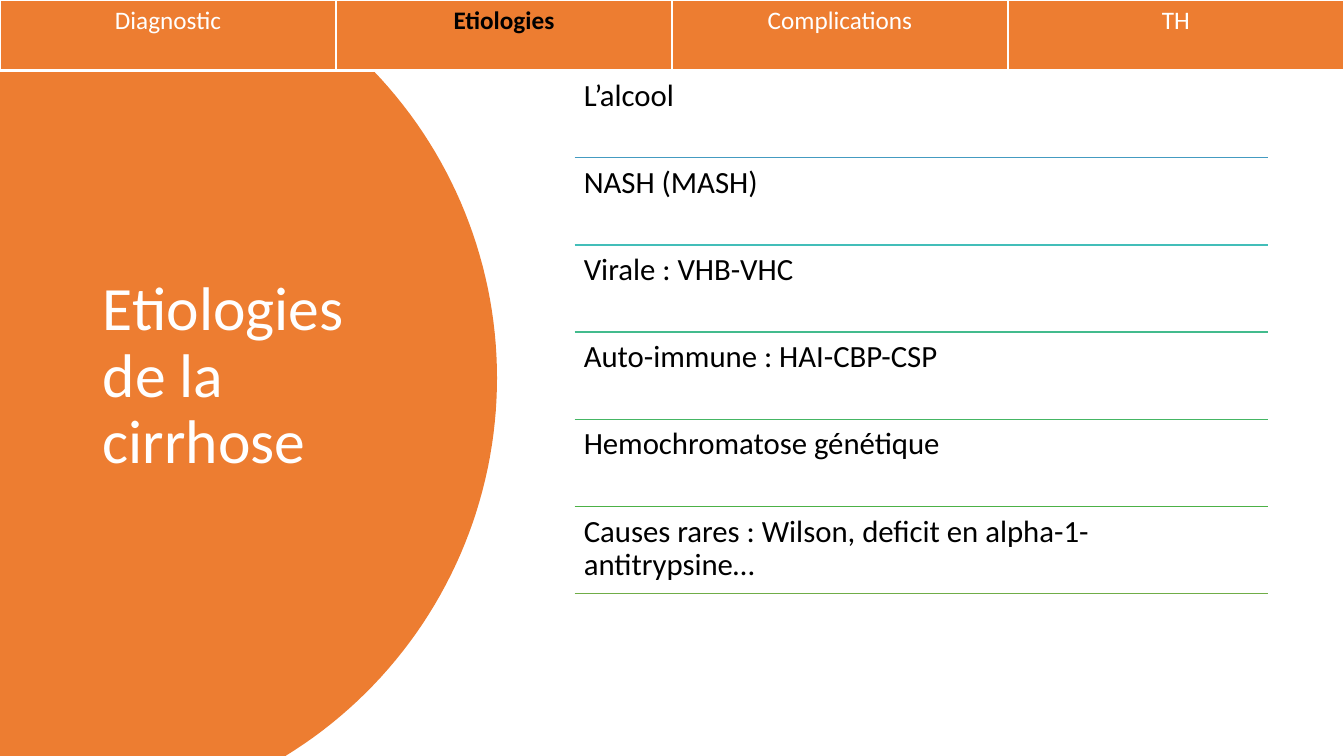
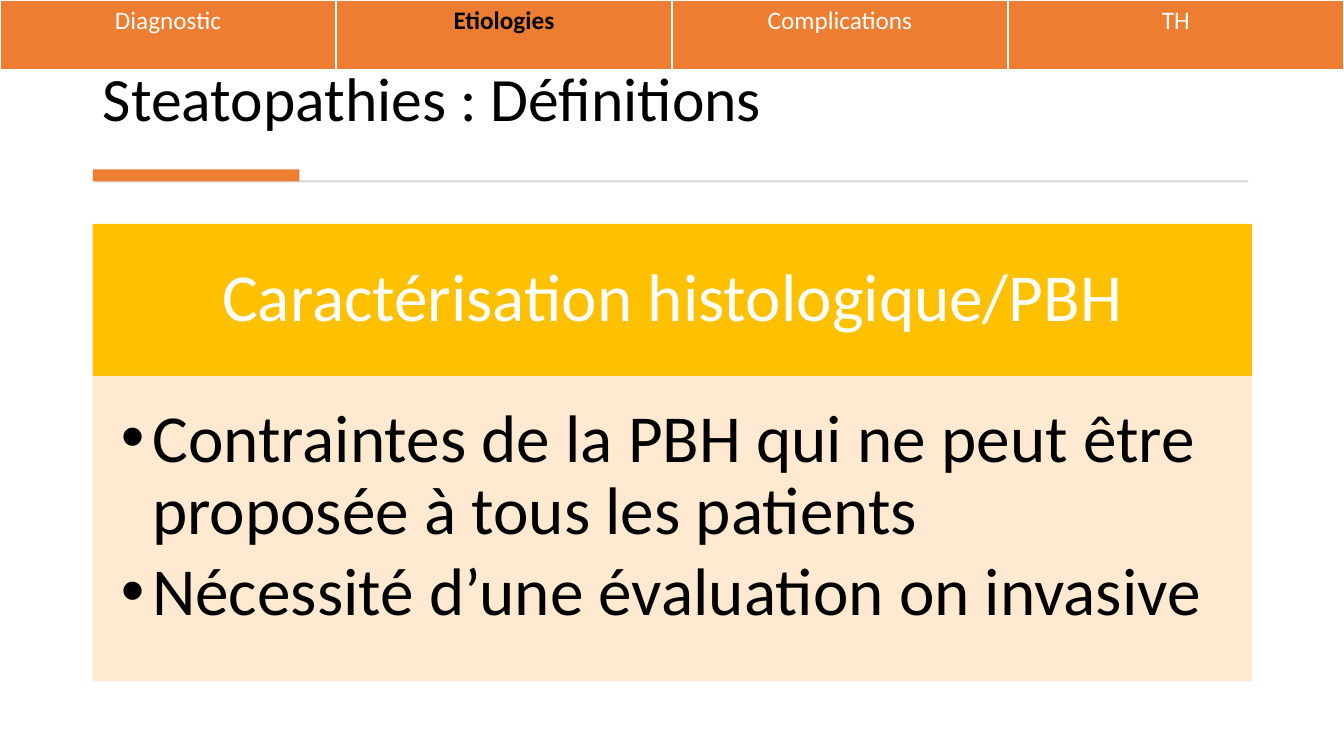
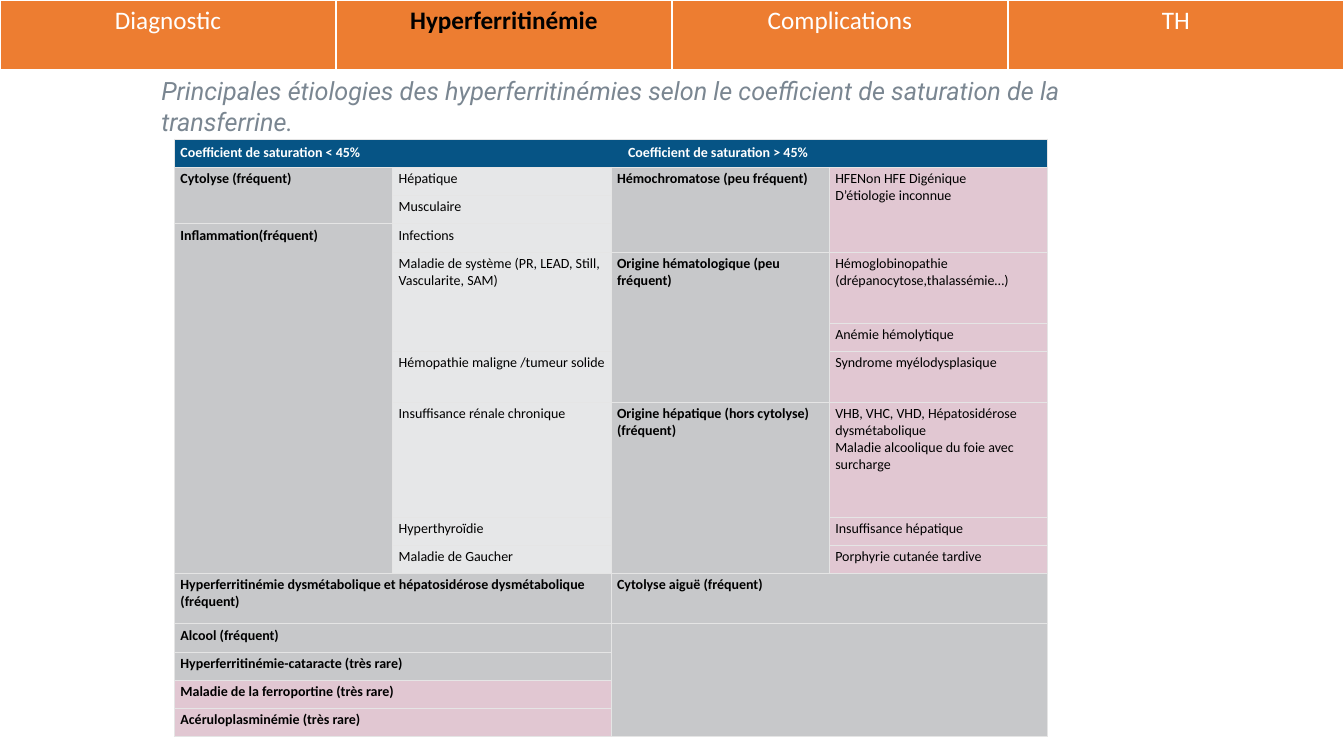
import math

import lxml.etree
import pptx
import pptx.dml.color
import pptx.enum.shapes
import pptx.enum.text
import pptx.oxml.ns
import pptx.util

Inches = pptx.util.Inches
Pt = pptx.util.Pt
RGBColor = pptx.dml.color.RGBColor
Align = pptx.enum.text.PP_ALIGN
Anchor = pptx.enum.text.MSO_ANCHOR
qn = pptx.oxml.ns.qn

# Colours
ORANGE = RGBColor(0xED, 0x7D, 0x31)
AMBER = RGBColor(0xFF, 0xC0, 0x00)
CREAM = RGBColor(0xFF, 0xE8, 0xCC)
WHITE = RGBColor(0xFF, 0xFF, 0xFF)
BLACK = RGBColor(0x00, 0x00, 0x00)
SLATE = RGBColor(0x7A, 0x86, 0x91)
SILVER = RGBColor(0xD5, 0xD5, 0xD5)
NAVY = RGBColor(0x06, 0x54, 0x85)
GREY = RGBColor(0xC7, 0xC8, 0xCA)
PALE = RGBColor(0xE6, 0xE7, 0xE8)
PINK = RGBColor(0xE1, 0xC7, 0xD2)
EDGE = RGBColor(0xE5, 0xE5, 0xE5)
RULES = [RGBColor.from_string(code) for code in (
    "4472C4", "449BC1", "43BEB9", "43BB8D", "45B664", "4CB146", "70AD47")]

WIDTH, HEIGHT, BAND = 13.33, 7.5, 0.7
TITLE_ONLY, TITLE_BODY = 5, 1


def place(shape, box):
    shape.left, shape.top, shape.width, shape.height = map(Inches, box)


class Deck:
    font = "Calibri"

    def __init__(self):
        self.file = pptx.Presentation()
        self.file.slide_width = Inches(WIDTH)
        self.file.slide_height = Inches(HEIGHT)
        self.slide = None

    def page(self, layout):
        self.slide = self.file.slides.add_slide(self.file.slide_layouts[layout])

    def letter(self, frame, text, size, color, bold=False, italic=False,
               font=None, align=Align.LEFT, space=1, after=0):
        frame.text = text
        for par in frame.paragraphs:
            par.alignment = align
            par.line_spacing = space
            par.space_before, par.space_after = Pt(0), Pt(after)
            for run in par.runs:
                style = run.font
                style.name, style.size = font or self.font, Pt(size)
                style.bold, style.italic = bold, italic
                style.color.rgb = color

    def setup(self, frame, anchor, insets):
        frame.word_wrap = True
        frame.auto_size = pptx.enum.text.MSO_AUTO_SIZE.NONE
        frame.vertical_anchor = anchor
        (frame.margin_left, frame.margin_top,
         frame.margin_right, frame.margin_bottom) = map(Inches, insets)

    def title(self, box, text, size=44, color=BLACK, anchor=Anchor.MIDDLE,
              space=0.9, **style):
        shape = self.slide.shapes.title
        self.slide.shapes.element.append(shape.element)  # bring to front
        place(shape, box)
        self.setup(shape.text_frame, anchor, (0.1, 0.05, 0.1, 0.05))
        self.letter(shape.text_frame, text, size, color, space=space, **style)

    def text(self, box, text, size):
        shape = self.slide.shapes.add_textbox(*map(Inches, box))
        self.setup(shape.text_frame, Anchor.TOP, [0.09] * 4)
        self.letter(shape.text_frame, text, size, BLACK, space=0.9)

    def rect(self, box, fill):
        shape = self.slide.shapes.add_shape(
            pptx.enum.shapes.MSO_SHAPE.RECTANGLE, *map(Inches, box))
        self.flat(shape, fill)
        return shape

    def flat(self, shape, fill):
        shape.shadow.inherit = False
        shape.fill.solid()
        shape.fill.fore_color.rgb = fill
        shape.line.fill.background()

    def panel(self, box, text, size, fill):
        frame = self.rect(box, fill).text_frame
        self.setup(frame, Anchor.MIDDLE, (0.37, 0.21, 0.37, 0.21))
        self.letter(frame, text, size, WHITE, align=Align.CENTER, space=0.9)

    def bullets(self, box, lines, size, fill, alpha):
        shape = self.slide.placeholders[1]
        self.slide.shapes.element.append(shape.element)
        place(shape, box)
        shape.fill.solid()
        shape.fill.fore_color.rgb = fill
        for tint in shape.element.spPr.iter(qn("a:srgbClr")):
            lxml.etree.SubElement(tint, qn("a:alpha"), val=str(alpha * 1000))
        frame = shape.text_frame
        self.setup(frame, Anchor.TOP, (0.28, 0.28, 0.37, 0.42))
        self.letter(frame, "\n".join(lines), size, BLACK, space=0.9, after=6)
        for par in frame.paragraphs:
            props = par._p.get_or_add_pPr()
            props.set("marL", str(Inches(0.31)))
            props.set("indent", str(-Inches(0.31)))
            lxml.etree.SubElement(props, qn("a:buFont"), typeface="Arial")
            lxml.etree.SubElement(props, qn("a:buChar"), char="•")

    def line(self, left, right, top, color):
        rule = self.slide.shapes.add_connector(
            pptx.enum.shapes.MSO_CONNECTOR.STRAIGHT,
            Inches(left), Inches(top), Inches(right), Inches(top))
        rule.line.color.rgb, rule.line.width = color, Pt(1)
        lxml.etree.SubElement(rule.element.spPr, qn("a:effectLst"))

    def disc(self, center, radius, fill):
        """Disc cut off by the left, top and bottom slide edges."""
        reach = math.asin(HEIGHT / 2 / radius)
        turns = [reach * step / 40 for step in range(-40, 41)]
        points = [(Inches(center + radius * math.cos(turn)),
                   Inches(HEIGHT / 2 + radius * math.sin(turn))) for turn in turns]
        outline = self.slide.shapes.build_freeform(0, 0)
        outline.add_line_segments(points + [(0, Inches(HEIGHT))], close=True)
        self.flat(outline.convert_to_shape(), fill)

    def grid(self, left, top, widths, heights):
        box = (left, top, sum(widths), sum(heights))
        table = self.slide.shapes.add_table(
            len(heights), len(widths), *map(Inches, box)).table
        table.first_row = table.horz_banding = False
        for col, width in zip(table.columns, widths):
            col.width = Inches(width)
        for row, height in zip(table.rows, heights):
            row.height = Inches(height)
        return table

    def paint(self, cell, fill, edge, widths):
        """Borders (left, right, top, bottom) come before the fill."""
        props = cell._tc.get_or_add_tcPr()
        for side, width in zip("LRTB", widths):
            line = lxml.etree.SubElement(props, qn("a:ln" + side), w=str(Pt(width)))
            solid = lxml.etree.SubElement(line, qn("a:solidFill"))
            lxml.etree.SubElement(solid, qn("a:srgbClr"), val=str(edge))
        cell.fill.solid()
        cell.fill.fore_color.rgb = fill

    def nav(self, current):
        """Band of chapters, the current one (second) in bold black."""
        names = ["Diagnostic", current, "Complications", "TH"]
        table = self.grid(0, 0, [WIDTH / 4] * 4, [BAND])
        for cell, name in zip(table.rows[0].cells, names):
            here = name == current
            self.paint(cell, ORANGE, WHITE, (1, 1, 1, 3))
            self.letter(cell.text_frame, name, 18, BLACK if here else WHITE,
                        bold=here, align=Align.CENTER)

    def causes(self, left, top, widths, heights, items):
        """Table of items: row, column, rows spanned, columns spanned, text."""
        table = self.grid(left, top, widths, heights)
        fills = (GREY, PALE, GREY, PINK)
        for row, col, down, across, text in items:
            head = row == 0
            fill = NAVY if head else PINK if row > 12 and col == 0 else fills[col]
            first = table.cell(row, col)
            if down * across > 1:
                first.merge(table.cell(row + down - 1, col + across - 1))
            for y in range(row, row + down):
                for x in range(col, col + across):
                    cell = table.cell(y, x)
                    cell.margin_left = cell.margin_right = Inches(0.06)
                    cell.margin_top = cell.margin_bottom = Inches(0.03)
                    self.paint(cell, fill, EDGE, [0.75] * 4)
                    if cell.is_spanned or not text:
                        lxml.etree.SubElement(cell.text_frame.paragraphs[0]._p,
                                              qn("a:endParaRPr"), sz="1000")
            if text:
                self.letter(first.text_frame, text, 10, WHITE if head else BLACK,
                            bold=col in (0, 2))
            if head:
                first.vertical_anchor = Anchor.MIDDLE
                props = first.text_frame.paragraphs[0]._p.get_or_add_pPr()
                tabs = lxml.etree.SubElement(props, qn("a:tabLst"))
                lxml.etree.SubElement(tabs, qn("a:tab"), pos=str(Inches(4.44)), algn="l")


def main():
    deck = Deck()

    # Slide 1: list of causes
    deck.page(TITLE_ONLY)
    deck.disc(0.53, 4.4, ORANGE)
    deck.title((0.92, 0.7, 3.23, 6.09), "Etiologies de la cirrhose", color=WHITE)
    causes = ["L’alcool", "NASH (MASH)", "Virale : VHB-VHC",
              "Auto-immune : HAI-CBP-CSP", "Hemochromatose génétique",
              "Causes rares : Wilson, deficit en alpha-1-antitrypsine…"]
    left, right, step = 5.7, 12.58, 5.19 / len(causes)
    for index, color in enumerate(RULES):
        deck.line(left, right, BAND + index * step, color)
    for index, cause in enumerate(causes):
        deck.text((left, BAND + index * step, right - left, step), cause, 22)
    deck.nav("Etiologies")

    # Slide 2: definitions
    deck.page(TITLE_BODY)
    deck.title((0.92, 0.28, 11.49, 1.11), "Steatopathies : Définitions",
               anchor=Anchor.BOTTOM)
    deck.rect((0.95, 1.79, 11.43, 0.02), SILVER)
    deck.rect((0.92, 1.68, 2.05, 0.12), ORANGE)
    deck.panel((0.92, 2.22, 11.5, 1.51), "Caractérisation histologique/PBH", 48, AMBER)
    deck.bullets((0.92, 3.73, 11.5, 3.03), [
        "Contraintes de la PBH qui ne peut être proposée à tous les patients",
        "Nécessité d’une évaluation on invasive"], 48, CREAM, 90)
    deck.nav("Etiologies")

    # Slide 3: table of causes
    deck.page(TITLE_ONLY)
    heights = [0.28] * 15
    heights[4], heights[6], heights[7], heights[10] = 0.71, 0.5, 1.14, 0.5
    deck.causes(1.73, 1.38, [8.66 / 4] * 4, heights, [
        (0, 0, 1, 4, "Coefficient de saturation < 45%\tCoefficient de saturation > 45%"),
        (1, 0, 2, 1, "Cytolyse (fréquent)"),
        (3, 0, 7, 1, "Inflammation(fréquent)"),
        (1, 1, 1, 1, "Hépatique"),
        (2, 1, 1, 1, "Musculaire"),
        (3, 1, 1, 1, "Infections"),
        (4, 1, 2, 1, "Maladie de système (PR, LEAD, Still, Vascularite, SAM)"),
        (6, 1, 1, 1, "Hémopathie maligne /tumeur solide"),
        (7, 1, 1, 1, "Insuffisance rénale chronique"),
        (8, 1, 1, 1, "Hyperthyroïdie"),
        (9, 1, 1, 1, "Maladie de Gaucher"),
        (1, 2, 3, 1, "Hémochromatose (peu fréquent)"),
        (4, 2, 3, 1, "Origine hématologique (peu fréquent)"),
        (7, 2, 3, 1, "Origine hépatique (hors cytolyse) (fréquent)"),
        (1, 3, 3, 1, "HFENon HFE Digénique\nD’étiologie inconnue"),
        (4, 3, 1, 1, "Hémoglobinopathie (drépanocytose,thalassémie…)"),
        (5, 3, 1, 1, "Anémie hémolytique"),
        (6, 3, 1, 1, "Syndrome myélodysplasique"),
        (7, 3, 1, 1, "VHB, VHC, VHD, Hépatosidérose dysmétabolique\n"
                     "Maladie alcoolique du foie avec surcharge"),
        (8, 3, 1, 1, "Insuffisance hépatique"),
        (9, 3, 1, 1, "Porphyrie cutanée tardive"),
        (10, 0, 1, 2, "Hyperferritinémie dysmétabolique et hépatosidérose "
                      "dysmétabolique (fréquent)"),
        (10, 2, 1, 2, "Cytolyse aiguë (fréquent)"),
        (11, 0, 1, 2, "Alcool (fréquent)"),
        (12, 0, 1, 2, "Hyperferritinémie-cataracte (très rare)"),
        (13, 0, 1, 2, "Maladie de la ferroportine (très rare)"),
        (14, 0, 1, 2, "Acéruloplasminémie (très rare)"),
        (11, 2, 4, 2, "")])
    deck.title((1.5, 0.7, 9.9, 0.4), "Principales étiologies des hyperferritinémies "
               "selon le coefficient de saturation de la transferrine.", 18, SLATE,
               Anchor.TOP, 1, italic=True, font="Roboto")
    deck.nav("Hyperferritinémie")

    deck.file.save("out.pptx")


if __name__ == "__main__":
    main()
